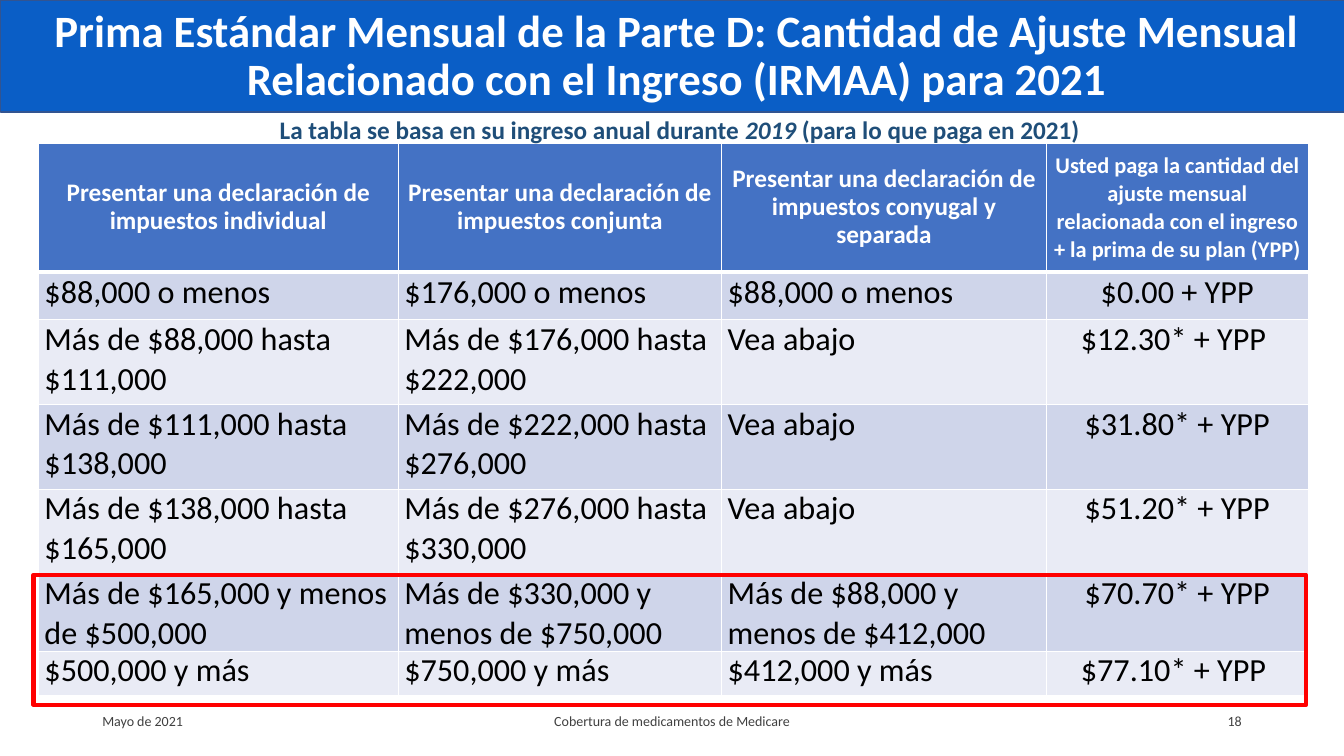
"""Build the slide on the 2021 Part D income-related adjustment."""
from lxml import etree
from pptx import Presentation
from pptx.dml.color import RGBColor
from pptx.enum.shapes import MSO_SHAPE
from pptx.enum.text import MSO_ANCHOR, MSO_AUTO_SIZE, PP_ALIGN
from pptx.oxml.ns import qn
from pptx.util import Pt

LEFT, MID, RIGHT = PP_ALIGN.LEFT, PP_ALIGN.CENTER, PP_ALIGN.RIGHT
TOP, CENTER = MSO_ANCHOR.TOP, MSO_ANCHOR.MIDDLE
RECT, FIXED = MSO_SHAPE.RECTANGLE, MSO_AUTO_SIZE.NONE
FONT = "Calibri"
WHITE = RGBColor(0xFF, 0xFF, 0xFF)
BLACK = RGBColor(0, 0, 0)
RED = RGBColor(0xFF, 0, 0)
GRAY = RGBColor(0x40, 0x40, 0x40)
NAVY = RGBColor(0x1F, 0x4E, 0x79)
BAR = RGBColor(0x0A, 0x5E, 0xC6)
EDGE = RGBColor(0x32, 0x54, 0x91)
HEAD = RGBColor(0x44, 0x72, 0xC4)
BANDS = [RGBColor(0xE9, 0xEB, 0xF5), RGBColor(0xCF, 0xD5, 0xEA)]

TITLE = ("Prima Estándar Mensual de la Parte D: Cantidad de Ajuste Mensual "
         "Relacionado con el Ingreso (IRMAA) para 2021")
BASIS = [("La tabla se basa en su ingreso anual durante ", False),
         ("2019 ", True), ("(para lo que paga en 2021)", False)]
ROWS = [
    ("Presentar una declaración de impuestos individual",
     "Presentar una declaración de impuestos conjunta",
     "Presentar una declaración de impuestos conyugal y separada",
     "Usted paga la cantidad del ajuste mensual relacionada con el ingreso "
     "+ la prima de su plan (YPP)"),
    ("$88,000 o menos", "$176,000 o menos", "$88,000 o menos", "$0.00 + YPP"),
    ("Más de $88,000 hasta $111,000", "Más de $176,000 hasta $222,000",
     "Vea abajo", "$12.30* + YPP "),
    ("Más de $111,000 hasta $138,000", "Más de $222,000 hasta $276,000",
     "Vea abajo", "$31.80* + YPP"),
    ("Más de $138,000 hasta $165,000", "Más de $276,000 hasta $330,000",
     "Vea abajo", "$51.20* + YPP"),
    ("Más de $165,000 y menos de $500,000",
     "Más de $330,000 y menos de $750,000",
     "Más de $88,000 y menos de $412,000", "$70.70* + YPP"),
    ("$500,000 y más", "$750,000 y más", "$412,000 y más", "$77.10* + YPP "),
]
WIDTHS = [257, 231, 232, 187]
HEIGHTS = [92, 34, 60.5, 60.5, 60.5, 55, 32]
FOOT = [("Mayo de 2021", 66, 216, LEFT),
        ("Cobertura de medicamentos de Medicare", 318, 324, MID),
        ("18", 678, 216, RIGHT)]


def write(para, text, size, color, bold=False, italic=False):
    """Add one formatted run."""
    run = para.add_run()
    run.text = text
    font = run.font
    font.name, font.size, font.bold, font.italic = FONT, Pt(size), bold, italic
    font.color.rgb = color


def add_box(slide, box, align, anchor):
    """Add a wrapping text box and return its paragraph."""
    frame = slide.shapes.add_textbox(*map(Pt, box)).text_frame
    frame.word_wrap = True
    frame.vertical_anchor = anchor
    para = frame.paragraphs[0]
    para.alignment = align
    return para


def add_rect(slide, box, fill, line, width):
    """Add a rectangle, hollow when there is no fill."""
    rect = slide.shapes.add_shape(RECT, *map(Pt, box))
    rect.shadow.inherit = False
    if fill is None:
        rect.fill.background()
    else:
        rect.fill.solid()
        rect.fill.fore_color.rgb = fill
    rect.line.color.rgb = line
    rect.line.width = Pt(width)


def rule_cell(cell, widths):
    """Draw white borders ahead of the cell's fill."""
    props = cell._tc.get_or_add_tcPr()
    for spot, (side, width) in enumerate(widths.items()):
        line = etree.Element(qn("a:" + side), w=str(Pt(width)))
        fill = etree.SubElement(line, qn("a:solidFill"))
        etree.SubElement(fill, qn("a:srgbClr"), val=str(WHITE))
        props.insert(spot, line)


def add_grid(slide):
    """Add the income table."""
    box = map(Pt, (27.5, 102.5, sum(WIDTHS), sum(HEIGHTS)))
    grid = slide.shapes.add_table(len(ROWS), len(WIDTHS), *box).table
    for col, width in zip(grid.columns, WIDTHS):
        col.width = Pt(width)
    for r, texts in enumerate(ROWS):
        grid.rows[r].height = Pt(HEIGHTS[r])
        for c, text in enumerate(texts):
            cell, last = grid.cell(r, c), c == len(WIDTHS) - 1
            cell.margin_left = cell.margin_right = Pt(4.3)
            cell.margin_top = cell.margin_bottom = 0
            cell.vertical_anchor = TOP if r else CENTER
            cell.fill.solid()
            cell.fill.fore_color.rgb = BANDS[r % 2] if r else HEAD
            rule_cell(cell, {"lnL": 1, "lnR": 1, "lnT": 3 if r == 1 else 1,
                             "lnB": 1 if r else 3})
            para = cell.text_frame.paragraphs[0]
            para.alignment = LEFT if r and not last else MID
            if r:
                write(para, text, 23, BLACK)
            else:
                para.line_spacing = Pt(20)
                write(para, text, 16 if last else 18, WHITE, True)


def add_title(slide):
    """Fill the title and lift it above the bar."""
    title = slide.shapes.title
    title.left, title.top, title.width, title.height = map(
        Pt, (27.5, 0.5, 912, 80.5))
    frame = title.text_frame
    frame.auto_size = FIXED
    frame.word_wrap = True
    frame.vertical_anchor = CENTER
    para = frame.paragraphs[0]
    para.alignment, para.line_spacing = MID, 0.9
    write(para, TITLE, 32, WHITE, True)
    title._element.getparent().append(title._element)


def main():
    """Compose and save the slide."""
    deck = Presentation()
    deck.slide_width, deck.slide_height = Pt(960), Pt(540)
    slide = deck.slides.add_slide(deck.slide_layouts[5])
    add_rect(slide, (0.5, 0, 960, 80), BAR, EDGE, 1)
    for text, left, width, align in FOOT:
        para = add_box(slide, (left, 500.5, width, 29), align, CENTER)
        write(para, text, 10, GRAY)
    add_grid(slide)
    add_rect(slide, (24, 410.5, 909, 93), None, RED, 3)
    para = add_box(slide, (175, 78, 621, 29), MID, TOP)
    for text, slant in BASIS:
        write(para, text, 18, NAVY, True, slant)
    add_title(slide)
    deck.save("out.pptx")


if __name__ == "__main__":
    main()
